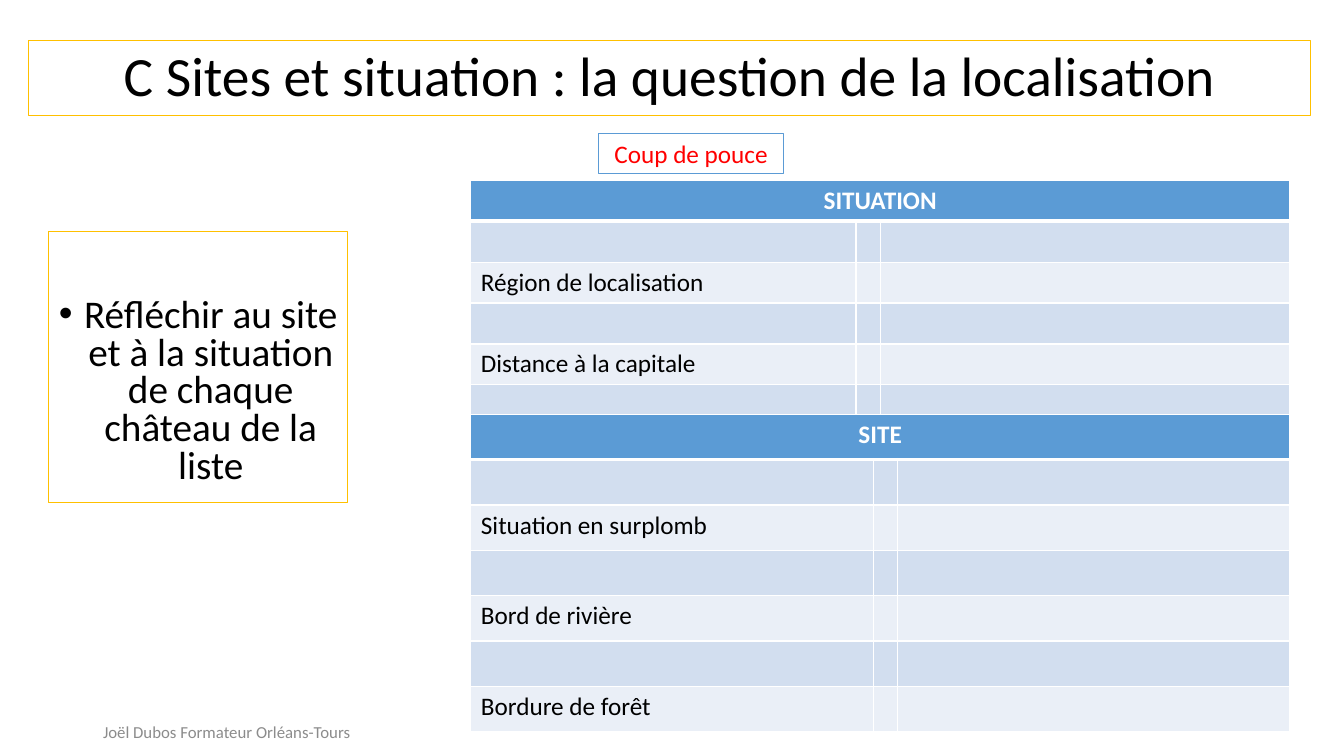
import pptx
import pptx.util
import pptx.dml.color
import pptx.enum.shapes
import pptx.enum.text
import pptx.oxml
import lxml.etree

Inches = pptx.util.Inches
Pt = pptx.util.Pt
RGB = pptx.dml.color.RGBColor.from_string
ALIGN = pptx.enum.text.PP_ALIGN
ANCHOR = pptx.enum.text.MSO_ANCHOR
NS = "http://schemas.openxmlformats.org/drawingml/2006/main"
HUES = {"gold": "FFC000", "blue": "5B9BD5", "band": "D2DEEF", "pale": "EAEFF7",
        "white": "FFFFFF", "black": "000000", "red": "FF0000", "gray": "8C8C8C"}

deck = pptx.Presentation()
deck.slide_width = Inches(13.33)
deck.slide_height = Inches(7.5)
slide = deck.slides.add_slide(deck.slide_layouts[6])


def write(par, text, size, hue, align=ALIGN.CENTER, bold=False):
    par.alignment = align
    run = par.add_run()
    run.text = text
    run.font.name = "Calibri"
    run.font.size = Pt(size)
    run.font.bold = bold
    run.font.color.rgb = RGB(HUES[hue])


def frame(box, line, text, size, hue):
    rect = slide.shapes.add_shape(pptx.enum.shapes.MSO_SHAPE.RECTANGLE, *map(Inches, box))
    rect.shadow.inherit = False
    rect.fill.background()
    rect.line.color.rgb = RGB(HUES[line])
    rect.line.width = Pt(0.75)
    rect.text_frame.word_wrap = True
    rect.text_frame.vertical_anchor = ANCHOR.MIDDLE
    write(rect.text_frame.paragraphs[0], text, size, hue)
    return rect.text_frame


title = frame((0.28, 0.4, 12.72, 0.75), "gold",
              "C Sites et situation : la question de la localisation", 39.6, "black")
title.paragraphs[0].line_spacing = 0.9

grids = [
    (1.79, 0.4, (3.82, 0.23, 4.06),
     ["SITUATION", "", "Région de localisation", "", "Distance à la capitale", "", "", ""]),
    (4.11, 0.45, (3.99, 0.23, 3.89),
     ["SITE", "", "Situation en surplomb", "", "Bord de rivière", "", "Bordure de forêt"]),
]
for top, high, wides, labels in grids:
    grid = slide.shapes.add_table(len(labels), 3, Inches(4.67), Inches(top),
                                  Inches(8.11), Inches(high * len(labels))).table
    for col, wide in zip(grid.columns, wides):
        col.width = Inches(wide)
    for r, label in enumerate(labels):
        grid.rows[r].height = Inches(high)
        for c in range(3):
            cell = grid.cell(r, c)
            props = cell._tc.get_or_add_tcPr()
            for side in ("lnL", "lnR", "lnT", "lnB"):
                thick = 3 if r == 0 and side == "lnB" or r == 1 and side == "lnT" else 1
                props.append(pptx.oxml.parse_xml(
                    f'<a:{side} xmlns:a="{NS}" w="{Pt(thick)}"><a:solidFill>'
                    f'<a:srgbClr val="{HUES["white"]}"/></a:solidFill></a:{side}>'))
            cell.fill.solid()
            hue = "blue" if r == 0 else "band" if r % 2 else "pale"
            cell.fill.fore_color.rgb = RGB(HUES[hue])
        if label:
            par = grid.cell(r, 0).text_frame.paragraphs[0]
            if r == 0:
                write(par, label, 18, "white", bold=True)
            else:
                write(par, label, 18, "black", ALIGN.LEFT)
    grid.cell(0, 0).merge(grid.cell(0, 2))

task = frame((0.48, 2.3, 2.97, 2.69), "gold",
             "Réfléchir au site et à la situation de chaque château de la liste", 28, "black")
task.vertical_anchor = ANCHOR.TOP
task.margin_top = Inches(0.66)
point = task.paragraphs[0]
point.line_spacing = 0.8
props = point._p.get_or_add_pPr()
props.set("marL", str(Inches(0.25)))
props.set("indent", str(Inches(-0.25)))
font = lxml.etree.SubElement(props, f"{{{NS}}}buFont")
font.set("typeface", "Arial")
mark = lxml.etree.SubElement(props, f"{{{NS}}}buChar")
mark.set("char", "•")

foot = slide.shapes.add_textbox(Inches(0), Inches(7.06), Inches(4.5), Inches(0.4)).text_frame
foot.word_wrap = True
foot.vertical_anchor = ANCHOR.MIDDLE
write(foot.paragraphs[0], "Joël Dubos Formateur Orléans-Tours", 12, "gray")

frame((5.94, 1.32, 1.83, 0.4), "blue", "Coup de pouce", 18, "red")

deck.save("out.pptx")
